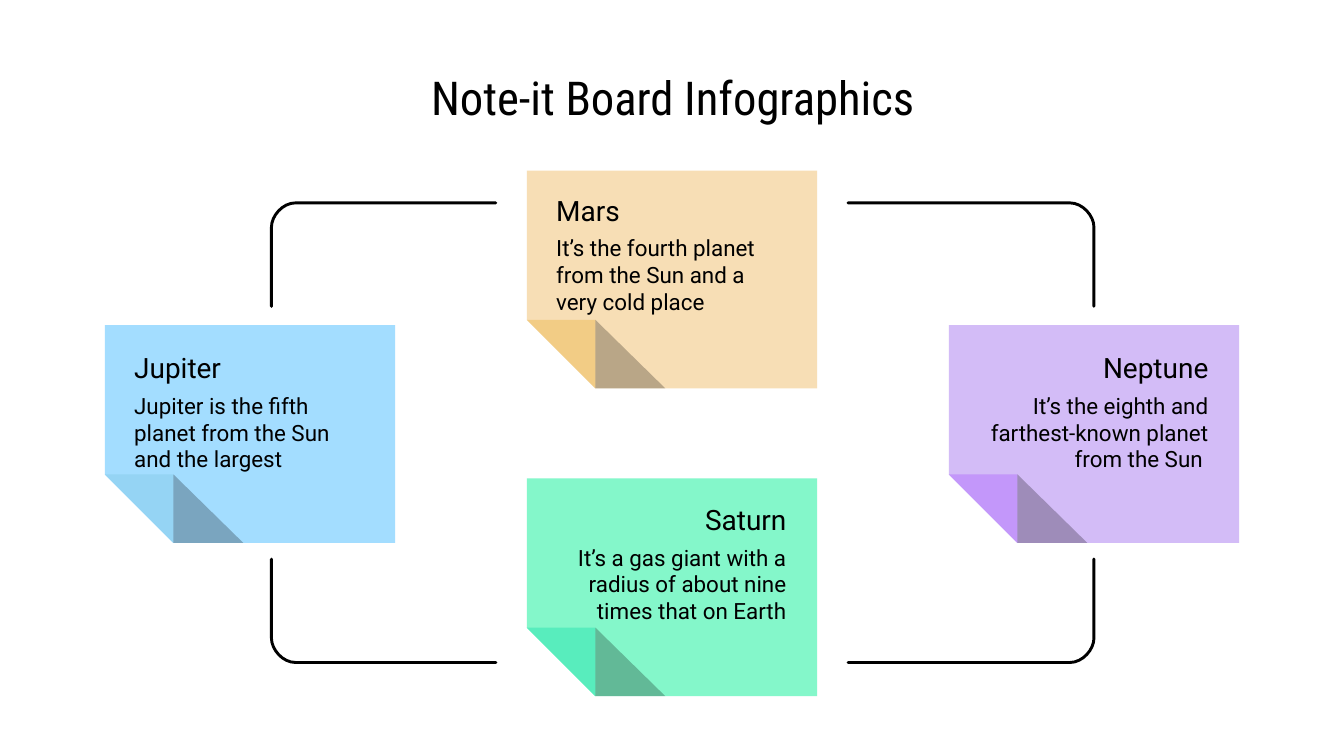
from lxml import etree
from pptx import Presentation
from pptx.dml.color import RGBColor
from pptx.enum.text import MSO_ANCHOR, PP_ALIGN
from pptx.oxml.ns import qn
from pptx.util import Inches, Pt

LEFT, CENTER, RIGHT = PP_ALIGN.LEFT, PP_ALIGN.CENTER, PP_ALIGN.RIGHT
MIDDLE = MSO_ANCHOR.MIDDLE

COLORS = {
    "ink": "000000",
    "sand": "F7DEB5", "sand fold": "F2CC85",
    "mint": "84F7CA", "mint fold": "58EDBD",
    "lilac": "D3BCF7", "lilac fold": "C397FA",
    "sky": "A3DDFF", "sky fold": "95D4F4",
}
NOTE_W, NOTE_H, FOLD = 2.16, 1.62, 0.51
CURVE = 0.55  # Bezier handle length of a quarter circle

# Left, top, text drop, colour, alignment, title, body
NOTES = [
    (3.92, 1.27, 0.15, "sand", LEFT, "Mars",
     "It’s the fourth planet from the Sun and a very cold place"),
    (3.92, 3.56, 0.16, "mint", RIGHT, "Saturn",
     "It’s a gas giant with a radius of about nine times that on Earth"),
    (7.06, 2.42, 0.17, "lilac", RIGHT, "Neptune",
     "It’s the eighth and farthest-known planet from the Sun "),
    (0.78, 2.42, 0.17, "sky", LEFT, "Jupiter",
     "Jupiter is the fifth planet from the Sun and the largest"),
]


def rgb(name):
    return RGBColor.from_string(COLORS[name])


def add_text(slide, text, x, y, w, h, size, font="Roboto", align=LEFT):
    box = slide.shapes.add_textbox(Inches(x), Inches(y), Inches(w), Inches(h))
    frame = box.text_frame
    frame.word_wrap = True
    frame.vertical_anchor = MIDDLE
    frame.margin_left = frame.margin_right = Inches(0.1)
    frame.margin_top = frame.margin_bottom = Inches(0.1)
    para = frame.paragraphs[0]
    para.alignment = align
    run = para.add_run()
    run.text = text
    run.font.size = Pt(size)
    run.font.name = font
    run.font.color.rgb = rgb("ink")


def add_path(shapes, points, close=True):
    first, *rest = [(Inches(x), Inches(y)) for x, y in points]
    pen = shapes.build_freeform(*first)
    pen.add_line_segments(rest, close=close)
    shape = pen.convert_to_shape()
    shape.shadow.inherit = False
    return shape


def add_face(shapes, points, color, alpha=None):
    """Draw a filled outline without a line; alpha is a percentage."""
    shape = add_path(shapes, points)
    shape.fill.solid()
    shape.fill.fore_color.rgb = rgb(color)
    shape.line.fill.background()
    if alpha:
        tint = shape._element.spPr.find(".//" + qn("a:srgbClr"))
        etree.SubElement(tint, qn("a:alpha")).set("val", str(alpha * 1000))


def add_note(slide, x, y, drop, color, align, title, body):
    right, base = x + NOTE_W, y + NOTE_H
    top, mid = base - FOLD, x + FOLD
    parts = slide.shapes.add_group_shape().shapes
    add_face(parts, [(x, y), (x, top), (mid, base), (right, base), (right, y)],
             color)
    add_face(parts, [(x, top), (mid, base), (mid, top)], color + " fold")
    add_face(parts, [(mid, top), (mid, base), (mid + 0.52, base)], "ink",
             alpha=25)
    add_text(slide, title, x + 0.12, y + drop, 1.91, 0.29, 15, align=align)
    add_text(slide, body, x + 0.12, y + drop + 0.3, 1.91, 0.65, 12,
             align=align)


def add_bend(slide, x1, y1, x2, y2, radius=0.18):
    """Run level from the first point, round a corner, then run upright."""
    dx = radius if x2 > x1 else -radius
    dy = radius if y2 > y1 else -radius
    shape = add_path(slide.shapes, [(x1, y1), (x2 - dx, y1), (x2, y1 + dy),
                                    (x2, y2)], close=False)
    shape.fill.background()
    shape.line.color.rgb = rgb("ink")
    shape.line.width = Pt(1.56)
    shape._element.spPr.find(qn("a:ln")).set("cap", "rnd")

    # Turn the corner's straight segment into a curve
    step = shape._element.spPr.findall(".//" + qn("a:lnTo"))[1]
    ex, ey = int(step[0].get("x")), int(step[0].get("y"))
    rest = 1 - CURVE
    curve = etree.Element(qn("a:cubicBezTo"))
    for px, py in ((ex - Inches(dx * rest), ey - Inches(dy)),
                   (ex, ey - Inches(dy * rest)), (ex, ey)):
        etree.SubElement(curve, qn("a:pt"), x=str(px), y=str(py))
    step.getparent().replace(step, curve)


def main():
    deck = Presentation()
    deck.slide_width = Inches(10)
    deck.slide_height = deck.slide_width * 9 // 16
    slide = deck.slides.add_slide(deck.slide_layouts[6])
    add_text(slide, "Note-it Board Infographics", 0.78, 0.5, 8.45, 0.44, 25,
             font="Roboto Condensed", align=CENTER)
    for note in NOTES:
        add_note(slide, *note)
    for x1, x2 in ((6.31, 8.14), (3.69, 2.02)):
        for y1, y2 in ((1.51, 2.28), (4.93, 4.16)):
            add_bend(slide, x1, y1, x2, y2)
    deck.save("out.pptx")


if __name__ == "__main__":
    main()
